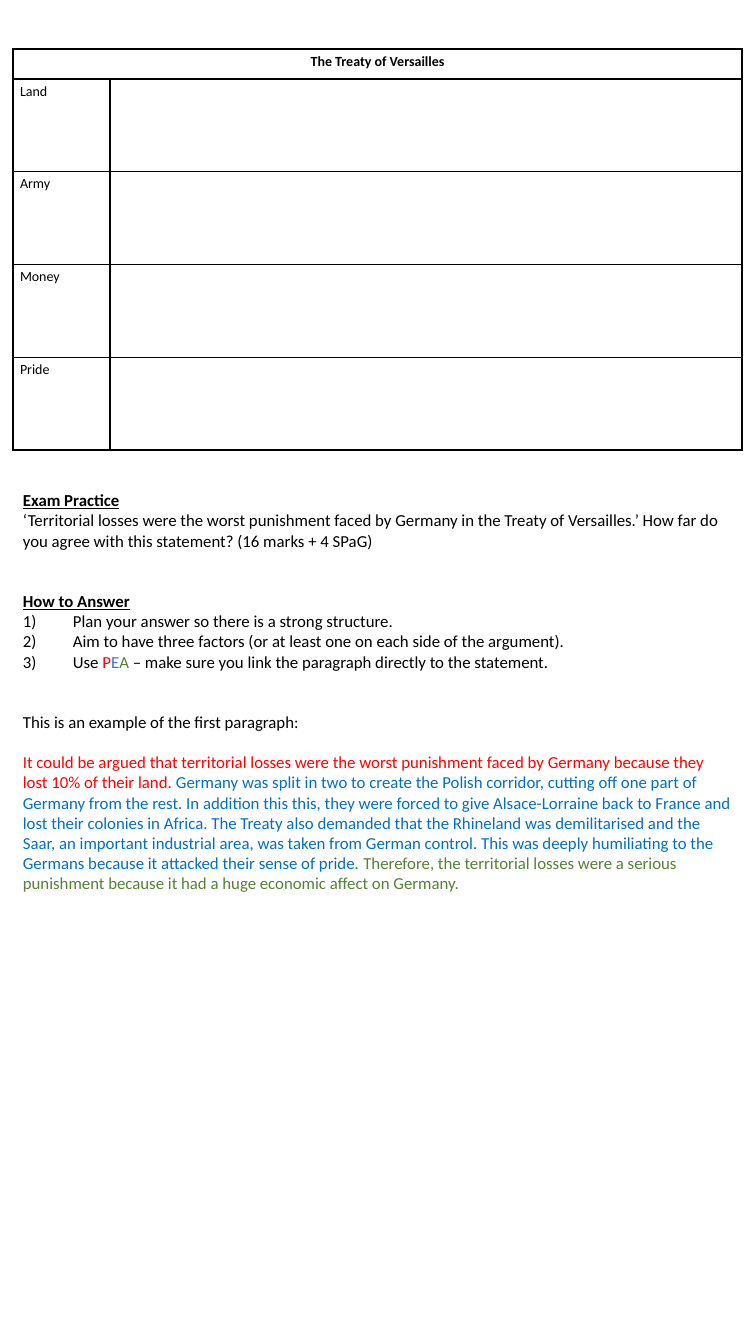
import pptx
import pptx.dml.color
import pptx.enum.text
import pptx.oxml
import pptx.oxml.ns
import pptx.util

BLACK, RED, BLUE, GREEN = "000000", "FF0000", "0070C0", "548235"
PEA_BLUE = "4472C4"
HEADING = {"bold": True, "underline": True}
SLIDE_WIDTH, SLIDE_HEIGHT = 756, 1344
LEFT, WIDTH = 13, 729
TABLE_TOP, HEADER_HEIGHT, BODY_HEIGHT, LABEL_WIDTH = 49, 30, 371, 97
TEXT_TOP, TEXT_HEIGHT, LIST_INDENT = 485, 458, 50
BLANK_LINE = 14.4

TABLE_TITLE = "The Treaty of Versailles"
TERMS = ["Land", "Army", "Money", "Pride"]
PARAGRAPHS = [
    {"runs": [("Exam Practice", BLACK)], "font": HEADING},
    {"runs": [("‘Territorial losses were the worst punishment faced by Germany in the Treaty of "
               "Versailles.’ How far do you agree with this statement? (16 marks + 4 SPaG)", BLACK)]},
    {"runs": [("How to Answer", BLACK)], "font": HEADING, "gap": 2},
    {"runs": [("Plan your answer so there is a strong structure.", BLACK)], "numbered": True},
    {"runs": [("Aim to have three factors (or at least one on each side of the argument).", BLACK)],
     "numbered": True},
    {"runs": [("Use ", BLACK), ("P", RED), ("E", PEA_BLUE), ("A", GREEN),
              (" – make sure you link the paragraph directly to the statement.", BLACK)],
     "numbered": True},
    {"runs": [("This is an example of the first paragraph:", BLACK)], "gap": 2},
    {"runs": [
        ("It could be argued that territorial losses were the worst punishment faced by Germany "
         "because they lost 10% of their land. ", RED),
        ("Germany was split in two to create the Polish corridor, cutting off one part of Germany "
         "from the rest. In addition this this, they were forced to give Alsace-Lorraine back to "
         "France and lost their colonies in Africa. The Treaty also demanded that the Rhineland was "
         "demilitarised and the Saar, an important industrial area, was taken from German control. "
         "This was deeply humiliating to the Germans because it attacked their sense of pride. ", BLUE),
        ("Therefore, the territorial losses were a serious punishment because it had a huge economic "
         "affect on Germany.", GREEN)], "gap": 1},
]


def px(length):
    """Turn slide pixels into EMU."""
    return pptx.util.Emu(round(length * 914400 / 100.8))


def color(value):
    """Turn a hex string into a colour."""
    return pptx.dml.color.RGBColor.from_string(value)


def set_attributes(target, values):
    """Set each named value on the target."""
    for name, value in values.items():
        setattr(target, name, value)


def add_run(paragraph, text, size, fill, font):
    """Add a run of formatted text."""
    run = paragraph.add_run()
    run.text = text
    set_attributes(run.font, {"name": "Calibri", "size": pptx.util.Pt(size), "bold": False, **font})
    run.font.color.rgb = color(fill)


def number_paragraph(paragraph):
    """Give a paragraph a hanging automatic number."""
    properties = paragraph._p.get_or_add_pPr()
    properties.set("marL", str(px(LIST_INDENT)))
    properties.set("indent", str(-px(LIST_INDENT)))
    bullet = pptx.oxml.parse_xml(
        f'<a:buAutoNum {pptx.oxml.ns.nsdecls("a")} type="arabicParenR"/>')
    properties.append(bullet)


def format_cell(cell):
    """Clear the fill and set the margins and borders of a cell."""
    set_attributes(cell, {"margin_left": px(7), "margin_right": px(7),
                          "margin_top": px(4), "margin_bottom": px(4)})
    properties = cell._tc.get_or_add_tcPr()
    for side in ("lnL", "lnR", "lnT", "lnB"):
        properties.append(pptx.oxml.parse_xml(
            f'<a:{side} {pptx.oxml.ns.nsdecls("a")} w="{pptx.util.Pt(1)}"><a:solidFill>'
            f'<a:srgbClr val="{BLACK}"/></a:solidFill></a:{side}>'))
    cell.fill.background()


def add_treaty_table(slide):
    """Add the table of treaty terms."""
    frame = slide.shapes.add_table(len(TERMS) + 1, 2, px(LEFT), px(TABLE_TOP),
                                   px(WIDTH), px(HEADER_HEIGHT + BODY_HEIGHT))
    table = frame.table
    set_attributes(table, {"first_row": False, "horz_banding": False})
    for column, width in zip(table.columns, (LABEL_WIDTH, WIDTH - LABEL_WIDTH)):
        column.width = px(width)
    heights = [HEADER_HEIGHT] + [BODY_HEIGHT / len(TERMS)] * len(TERMS)
    for row, height in zip(table.rows, heights):
        row.height = px(height)
    for cell in table.iter_cells():
        format_cell(cell)
    table.cell(0, 0).merge(table.cell(0, 1))
    for index, label in enumerate([TABLE_TITLE] + TERMS):
        paragraph = table.cell(index, 0).text_frame.paragraphs[0]
        add_run(paragraph, label, 10, BLACK, {"bold": index == 0})
    table.cell(0, 0).text_frame.paragraphs[0].alignment = pptx.enum.text.PP_ALIGN.CENTER


def add_exam_text(slide):
    """Add the exam question, the advice and the sample answer."""
    box = slide.shapes.add_textbox(px(LEFT), px(TEXT_TOP), px(WIDTH), px(TEXT_HEIGHT))
    frame = box.text_frame
    set_attributes(frame, {"word_wrap": True,
                           "auto_size": pptx.enum.text.MSO_AUTO_SIZE.SHAPE_TO_FIT_TEXT})
    for index, content in enumerate(PARAGRAPHS):
        paragraph = frame.add_paragraph() if index else frame.paragraphs[0]
        paragraph.space_before = pptx.util.Pt(BLANK_LINE * content.get("gap", 0))
        if content.get("numbered"):
            number_paragraph(paragraph)
        for text, fill in content["runs"]:
            add_run(paragraph, text, 12, fill, content.get("font", {}))


def main():
    """Build the slide and save it."""
    presentation = pptx.Presentation()
    set_attributes(presentation, {"slide_width": px(SLIDE_WIDTH), "slide_height": px(SLIDE_HEIGHT)})
    slide = presentation.slides.add_slide(presentation.slide_layouts[6])
    add_treaty_table(slide)
    add_exam_text(slide)
    presentation.save("out.pptx")


if __name__ == "__main__":
    main()
